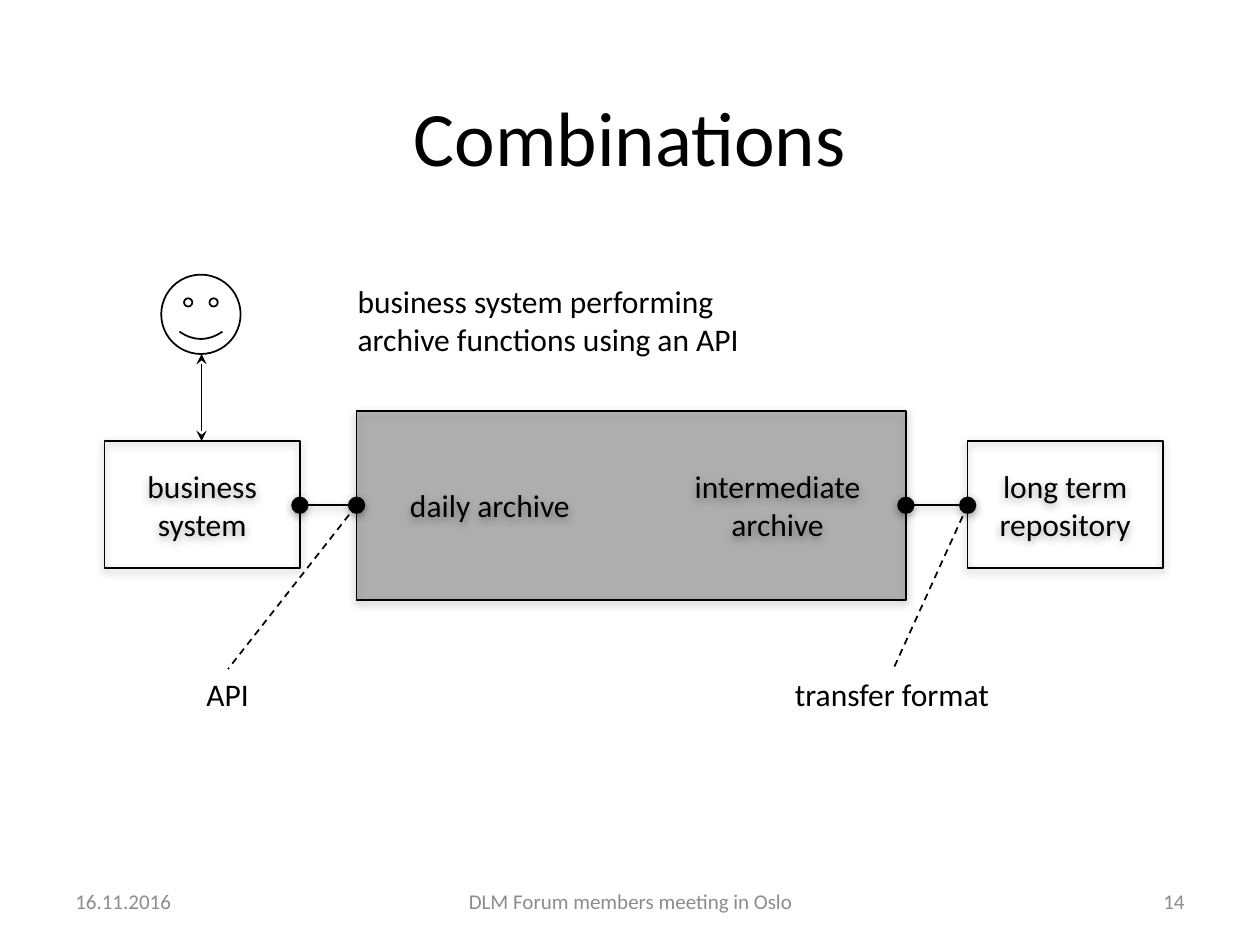
from lxml import etree
from pptx import Presentation
from pptx.dml.color import RGBColor
from pptx.enum import dml, shapes, text
from pptx.oxml import ns
from pptx.util import Inches, Pt

BLACK = RGBColor(0x00, 0x00, 0x00)
GREY = RGBColor(0x8C, 0x8C, 0x8C)
LEFT, CENTER, RIGHT = text.PP_ALIGN.LEFT, text.PP_ALIGN.CENTER, text.PP_ALIGN.RIGHT

BOX_WIDTH, BOX_HEIGHT, BOX_TOP = 1.55, 1.01, 3.5
BOX_LEFT, BOX_STEP = 0.83, 2.283
MIDDLE = 4.01
ARCHIVE_LEFT, ARCHIVE_RIGHT = 2.83, 7.19
REPOSITORY_LEFT = 7.68


def add_element(parent, tag, **attributes):
    element = etree.SubElement(parent, ns.qn(tag))
    for name, value in attributes.items():
        element.set(name, str(value))
    return element


def add_shadow(effects, alpha, distance):
    """Put a soft black shadow straight below the owner of the effect list."""
    shadow = add_element(effects, "a:outerShdw", blurRad=Pt(5), dist=Pt(distance),
                         dir=90 * 60000, rotWithShape=0)
    color = add_element(shadow, "a:srgbClr", val=BLACK)
    add_element(color, "a:alpha", val=alpha * 1000)


def write(shape, words, size=18, color=BLACK, align=LEFT,
          anchor=text.MSO_ANCHOR.MIDDLE, wrap=True):
    frame = shape.text_frame
    frame.word_wrap = wrap
    frame.vertical_anchor = anchor
    paragraph = frame.paragraphs[0]
    paragraph.text = words
    paragraph.alignment = align
    paragraph.font.name = "Calibri"
    paragraph.font.size = Pt(size)
    paragraph.font.color.rgb = color


def add_text(slide, words, left, top, width, height, **style):
    box = slide.shapes.add_textbox(*map(Inches, (left, top, width, height)))
    write(box, words, **style)
    return box


def add_label(slide, words, left, top, width, height):
    label = add_text(slide, words, left, top, width, height,
                     anchor=text.MSO_ANCHOR.TOP, wrap=False)
    label.text_frame.auto_size = text.MSO_AUTO_SIZE.SHAPE_TO_FIT_TEXT


def add_outline(slide, kind, left, top, width, height, outlined=True, shadowed=True):
    shape = slide.shapes.add_shape(kind, *map(Inches, (left, top, width, height)))
    shape.fill.background()
    if outlined:
        shape.line.color.rgb = BLACK
        shape.line.width = Pt(1)
    else:
        shape.line.fill.background()
    shape.shadow.inherit = False
    if shadowed:
        add_shadow(shape._element.spPr.find(ns.qn("a:effectLst")), 35, 1.8)
    return shape


def add_archive(slide):
    archive = add_outline(slide, shapes.MSO_SHAPE.RECTANGLE, ARCHIVE_LEFT, 3.26,
                          ARCHIVE_RIGHT - ARCHIVE_LEFT, 1.5)
    archive.fill.solid()
    archive.fill.fore_color.rgb = BLACK
    color = archive._element.spPr.find(ns.qn("a:solidFill"))[0]
    add_element(color, "a:alpha", val=25000)


def add_line(slide, start, end, ends=None, size="med", dashed=False, shadowed=False):
    line = slide.shapes.add_connector(shapes.MSO_CONNECTOR.STRAIGHT,
                                      *map(Inches, start + end))
    line.line.color.rgb = BLACK
    line.line.width = Pt(1)
    if dashed:
        line.line.dash_style = dml.MSO_LINE.DASH
    if ends:
        for tag in ("a:headEnd", "a:tailEnd"):
            add_element(line.line._get_or_add_ln(), tag, type=ends, w=size, len=size)
    effects = add_element(line._element.spPr, "a:effectLst")
    if shadowed:
        add_shadow(effects, 38, 1.6)


def add_stages(slide):
    stages = (("business system", True), ("daily archive", False),
              ("intermediate archive", False), ("long term repository", True))
    for index, (words, outlined) in enumerate(stages):
        stage = add_outline(slide, shapes.MSO_SHAPE.RECTANGLE,
                            BOX_LEFT + index * BOX_STEP, BOX_TOP,
                            BOX_WIDTH, BOX_HEIGHT, outlined)
        write(stage, words, align=CENTER)


def add_links(slide):
    for left, right in ((BOX_LEFT + BOX_WIDTH, ARCHIVE_LEFT),
                        (ARCHIVE_RIGHT, REPOSITORY_LEFT)):
        add_line(slide, (left, MIDDLE), (right, MIDDLE), "oval", "lg", shadowed=True)
    for joint, foot in ((ARCHIVE_LEFT, 1.81), (REPOSITORY_LEFT, 7.09)):
        add_line(slide, (joint, MIDDLE), (foot, 5.31), dashed=True)


def add_user(slide):
    add_outline(slide, shapes.MSO_SHAPE.SMILEY_FACE, 1.28, 2.18, 0.63, 0.63,
                shadowed=False)
    add_line(slide, (1.6, 2.81), (1.6, BOX_TOP), "stealth")


def add_footer(slide):
    for words, left, width, align in (
            ("16.11.2016", 0.5, 2.33, LEFT),
            ("DLM Forum members meeting in Oslo", 3.19, 3.63, CENTER),
            ("14", 7.17, 2.33, RIGHT)):
        add_text(slide, words, left, 6.95, width, 0.4, size=12, color=GREY, align=align)


def main():
    presentation = Presentation()
    presentation.slide_width, presentation.slide_height = Inches(10), Inches(7.5)
    slide = presentation.slides.add_slide(presentation.slide_layouts[6])
    add_archive(slide)
    add_text(slide, "Combinations", 0.5, 0.56, 9, 1.03, size=44, align=CENTER)
    add_stages(slide)
    add_links(slide)
    add_user(slide)
    add_label(slide, "API", 1.54, 5.31, 0.54, 0.4)
    add_label(slide, "transfer format", 6.21, 5.31, 1.76, 0.4)
    add_label(slide, "business system performing\varchive functions using an API",
              2.74, 2.19, 3.27, 0.71)
    add_footer(slide)
    presentation.save("out.pptx")


if __name__ == "__main__":
    main()
